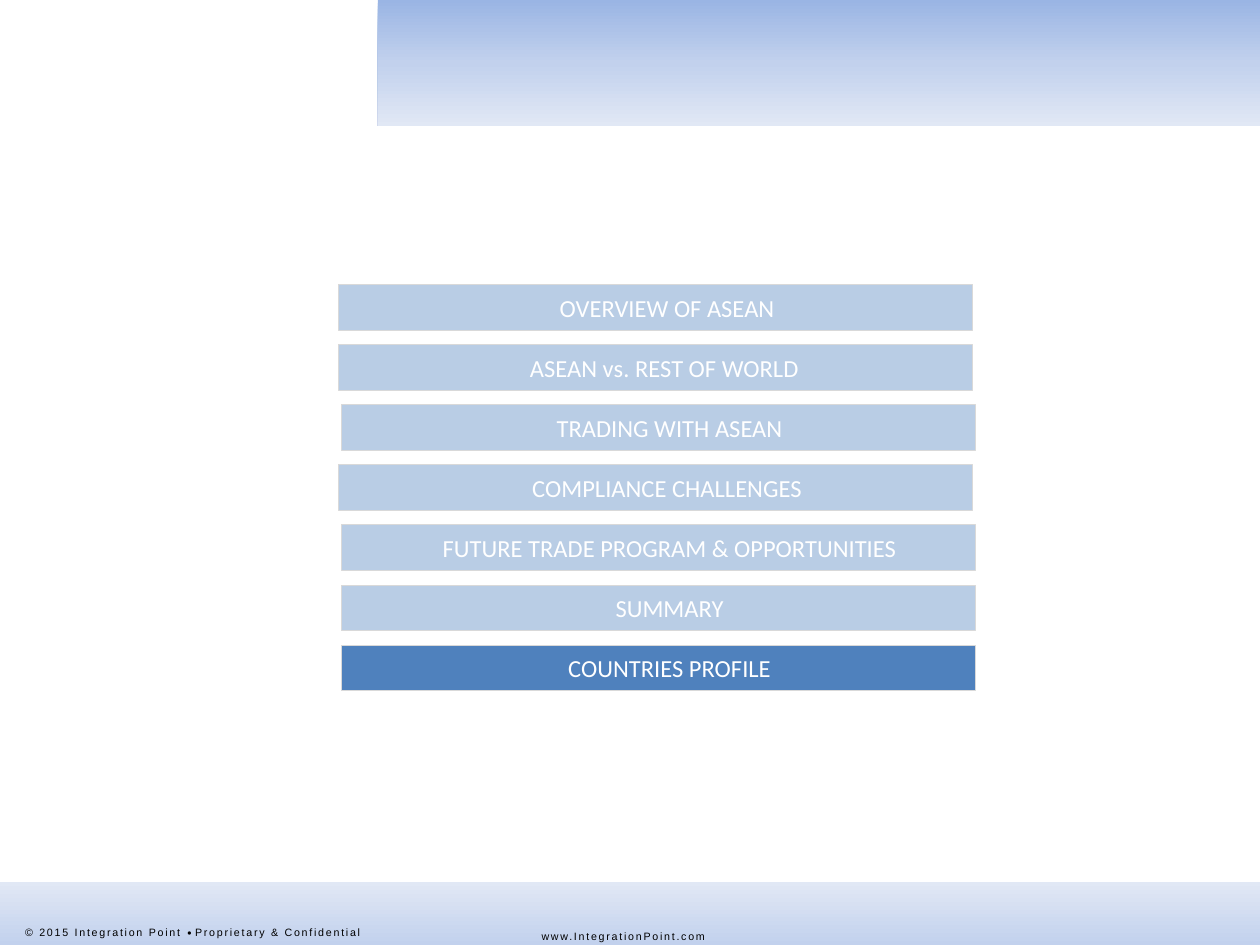
from copy import deepcopy
from dataclasses import dataclass

from pptx import Presentation
from pptx.dml.color import RGBColor
from pptx.enum.shapes import MSO_SHAPE
from pptx.enum.text import MSO_ANCHOR, MSO_AUTO_SIZE, PP_ALIGN
from pptx.util import Inches, Pt

WHITE = RGBColor(0xFF, 0xFF, 0xFF)
BLACK = RGBColor(0x00, 0x00, 0x00)
PALE_BLUE = RGBColor(0xB9, 0xCD, 0xE5)
STRONG_BLUE = RGBColor(0x4F, 0x81, 0xBD)
BORDER_GREY = RGBColor(0xD9, 0xD9, 0xD9)
BAND_COLOURS = (
    RGBColor(0x9A, 0xB5, 0xE4),
    RGBColor(0xC2, 0xD1, 0xED),
    RGBColor(0xE1, 0xE8, 0xF5),
)

AGENDA_TOP, AGENDA_PITCH = 2.26, 1.43 / 3
BAR_WIDTH, BAR_HEIGHT = 5.03, 0.36
CURVE_STEPS = 24

Point = tuple[float, float]


@dataclass
class AgendaItem:
    label: str
    left: float = 2.71
    fill: RGBColor = PALE_BLUE


@dataclass
class FooterRun:
    text: str
    size: float = 10.5
    raise_percent: int = 30
    spacing: float = 1


AGENDA = [
    AgendaItem("OVERVIEW OF ASEAN", left=2.69),
    AgendaItem("ASEAN vs. REST OF WORLD ", left=2.69),
    AgendaItem("TRADING WITH ASEAN"),
    AgendaItem("COMPLIANCE CHALLENGES", left=2.69),
    AgendaItem("FUTURE TRADE PROGRAM & OPPORTUNITIES"),
    AgendaItem("SUMMARY"),
    AgendaItem("COUNTRIES PROFILE", fill=STRONG_BLUE),
]
COPYRIGHT = [
    FooterRun("© 2015 Integration Point"),
    FooterRun(" ", size=12),
    FooterRun("• ", size=12, raise_percent=20, spacing=0),
    FooterRun("Proprietary & Confidential"),
]
WEB_ADDRESS = [FooterRun("www.IntegrationPoint.com")]


def bezier(start: Point, control1: Point, control2: Point, end: Point) -> list[Point]:
    """Return points along a cubic curve, both ends included."""
    points = []
    for step in range(CURVE_STEPS + 1):
        t = step / CURVE_STEPS
        weights = ((1 - t) ** 3, 3 * t * (1 - t) ** 2, 3 * t**2 * (1 - t), t**3)
        corners = (start, control1, control2, end)
        points.append(tuple(
            sum(w * corner[axis] for w, corner in zip(weights, corners))
            for axis in (0, 1)
        ))
    return points


def draw_band(slide, outline: list[Point], angle: float) -> None:
    """Draw a closed outline with the band gradient running at the angle."""
    builder = slide.shapes.build_freeform(*outline[0], scale=Inches(1))
    builder.add_line_segments(outline[1:], close=True)
    band = builder.convert_to_shape()
    band.shadow.inherit = False
    band.line.fill.background()
    band.fill.gradient()
    band.fill.gradient_angle = angle
    stop_list = band.fill._fill._gradFill.gsLst
    stop_list.insert(1, deepcopy(stop_list[0]))
    for index, (stop, colour) in enumerate(zip(band.fill.gradient_stops, BAND_COLOURS)):
        stop.position = index / 2
        stop.color.rgb = colour


def draw_footer_text(slide, left: float, top: float, width: float, height: float,
                     runs: list[FooterRun], wrap: bool):
    box = slide.shapes.add_textbox(
        Inches(left), Inches(top), Inches(width), Inches(height))
    frame = box.text_frame
    frame.word_wrap = wrap
    frame.auto_size = MSO_AUTO_SIZE.SHAPE_TO_FIT_TEXT
    for part in runs:
        run = frame.paragraphs[0].add_run()
        run.text = part.text
        run.font.name = "Arial"
        run.font.size = Pt(part.size)
        run.font.color.rgb = BLACK
        properties = run._r.get_or_add_rPr()
        properties.set("baseline", str(part.raise_percent * 1000))
        properties.set("spc", str(int(part.spacing * 100)))
    return frame


def draw_agenda_bar(slide, item: AgendaItem, top: float) -> None:
    bar = slide.shapes.add_shape(
        MSO_SHAPE.RECTANGLE, Inches(item.left), Inches(top),
        Inches(BAR_WIDTH), Inches(BAR_HEIGHT))
    bar.shadow.inherit = False
    bar.fill.solid()
    bar.fill.fore_color.rgb = item.fill
    bar.line.color.rgb = BORDER_GREY
    bar.line.width = Pt(0.5)
    frame = bar.text_frame
    frame.word_wrap = True
    frame.vertical_anchor = MSO_ANCHOR.MIDDLE
    frame.margin_left = frame.margin_right = Inches(0.05)
    frame.margin_top = frame.margin_bottom = Inches(0.02)
    frame.text = item.label
    paragraph = frame.paragraphs[0]
    paragraph.alignment = PP_ALIGN.CENTER
    properties = paragraph._p.get_or_add_pPr()
    properties.set("marL", str(Inches(0.18)))
    properties.set("indent", "0")
    font = paragraph.runs[0].font
    font.name = "Calibri"
    font.size = Pt(14)
    font.color.rgb = WHITE


def main() -> None:
    presentation = Presentation()
    presentation.slide_width = Inches(10)
    presentation.slide_height = Inches(7.5)
    slide = presentation.slides.add_slide(presentation.slide_layouts[6])

    header_curve = bezier((1.75, -0.02), (3.03, 0.07), (2.46, 0.84), (3.83, 0.9))
    draw_band(slide, [*header_curve, (10, 0.9), (10, -0.02)], angle=270)

    footer_shoulder = bezier((9.29, 7.24), (9.29, 7.25), (9.32, 7.22), (9.42, 7.27))
    footer_tail = bezier((9.42, 7.27), (9.53, 7.35), (9.45, 7.48), (9.63, 7.5))
    draw_band(slide, [(0, 7.24), *footer_shoulder, *footer_tail[1:], (0, 7.5)], angle=90)

    copyright_frame = draw_footer_text(slide, 0.1, 7.26, 4.12, 0.35, COPYRIGHT, wrap=True)
    copyright_frame.vertical_anchor = MSO_ANCHOR.MIDDLE
    copyright_frame.margin_bottom = Inches(0.1)
    draw_footer_text(slide, 4.2, 7.31, 1.6, 0.22, WEB_ADDRESS, wrap=False)

    for row, item in enumerate(AGENDA):
        draw_agenda_bar(slide, item, AGENDA_TOP + row * AGENDA_PITCH)

    presentation.save("out.pptx")


if __name__ == "__main__":
    main()
